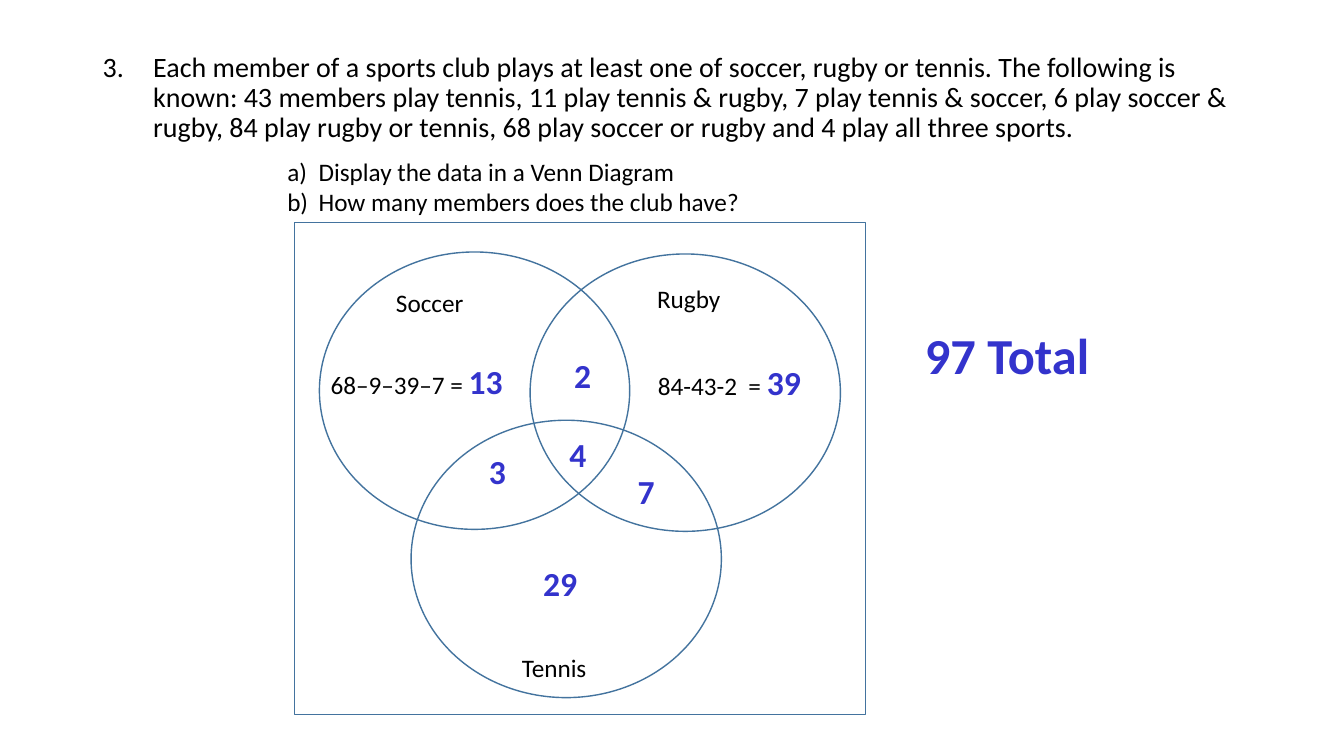
"""Builds a slide that solves a three-set Venn diagram problem about a sports club."""
from dataclasses import dataclass

from lxml.etree import SubElement
from pptx import Presentation
from pptx.dml.color import RGBColor
from pptx.enum.shapes import MSO_SHAPE
from pptx.enum.text import MSO_AUTO_SIZE
from pptx.oxml.ns import qn
from pptx.util import Cm, Pt


@dataclass(frozen=True)
class Theme:
    """Font, colours and type sizes of the slide."""
    font: str = "Calibri"
    ink: RGBColor = RGBColor(0x00, 0x00, 0x00)
    answer: RGBColor = RGBColor(0x33, 0x33, 0xCC)
    outline: RGBColor = RGBColor(0x43, 0x73, 0x9E)
    question_size: int = 20
    body_size: int = 18
    count_size: int = 24
    total_size: int = 36


THEME = Theme()
BODY = (THEME.body_size, THEME.ink, False)
QUESTION = (THEME.question_size, THEME.ink, False)
COUNT = (THEME.count_size, THEME.answer, True)
TOTAL = (THEME.total_size, THEME.answer, True)

PROBLEM = (
    "Each member of a sports club plays at least one of soccer, rugby or tennis. "
    "The following is known: 43 members play tennis, 11 play tennis & rugby, "
    "7 play tennis & soccer, 6 play soccer & rugby, 84 play rugby or tennis, "
    "68 play soccer or rugby and 4 play all three sports."
)
TASKS = ["Display the data in a Venn Diagram", "How many members does the club have?"]

UNIVERSE = (7.42, 5.61, 14.4, 12.4)
SET_SIZE = (7.82, 6.99)
SETS = [
    {"name": "Soccer", "corner": (8.05, 6.35), "label": (9.73, 7.11, 2.24, 1.02)},
    {"name": "Rugby", "corner": (13.36, 6.4), "label": (16.31, 7.01, 2.13, 1.02)},
    {"name": "Tennis", "corner": (10.36, 10.59), "label": (12.9, 16.31, 2.16, 1.02)},
]
REGIONS = [
    ("", "4", (14.1, 10.8, 0.94, 1.27)),
    ("", "7", (15.82, 11.73, 0.94, 1.27)),
    ("", "3", (12.07, 11.25, 0.94, 1.27)),
    ("", "2", (14.22, 8.81, 0.94, 1.27)),
    ("", "29", (13.44, 14.07, 1.37, 1.27)),
    ("84-43-2  = ", "39", (16.33, 8.99, 4.17, 1.27)),
    ("68–9–39–7 = ", "13", (8.08, 8.97, 4.9, 1.27)),
]


def add_text(page, place, paragraphs, wrap=False):
    """Adds a text box; each paragraph is a list of (text, style) spans."""
    box = page.shapes.add_textbox(*map(Cm, place))
    frame = box.text_frame
    frame.word_wrap = wrap
    frame.auto_size = MSO_AUTO_SIZE.SHAPE_TO_FIT_TEXT
    for index, spans in enumerate(paragraphs):
        para = frame.paragraphs[0] if index == 0 else frame.add_paragraph()
        for text, (size, colour, bold) in spans:
            span = para.add_run()
            span.text = text
            span.font.name = THEME.font
            span.font.size = Pt(size)
            span.font.bold = bold
            span.font.color.rgb = colour
    return frame


def number_paragraphs(frame, scheme, start, indent):
    """Numbers every paragraph of a frame with a hanging indent in centimetres."""
    for para in frame.paragraphs:
        properties = para._p.get_or_add_pPr()
        properties.set("marL", str(Cm(indent)))
        properties.set("indent", str(-Cm(indent)))
        numbering = SubElement(properties, qn("a:buAutoNum"), type=scheme)
        if start > 1:
            numbering.set("startAt", str(start))


def add_outline(page, kind, place):
    """Adds an unfilled shape with a thin outline."""
    shape = page.shapes.add_shape(kind, *map(Cm, place))
    shape.shadow.inherit = False
    shape.fill.background()
    shape.line.color.rgb = THEME.outline
    shape.line.width = Pt(1)


def main():
    """Builds and saves the deck."""
    deck = Presentation()
    deck.slide_width, deck.slide_height = Cm(33.87), Cm(19.05)
    page = deck.slides.add_slide(deck.slide_layouts[6])

    problem = add_text(page, (2.34, 1.02, 29.21, 3.68), [[(PROBLEM, QUESTION)]], wrap=True)
    problem.auto_size = MSO_AUTO_SIZE.NONE
    problem.margin_top = Cm(0.32)
    problem.paragraphs[0].line_spacing = 0.9
    number_paragraphs(problem, "arabicPeriod", 3, 1.27)

    tasks = add_text(page, (6.99, 3.81, 12.7, 1.8), [[(task, BODY)] for task in TASKS], wrap=True)
    number_paragraphs(tasks, "alphaLcParenR", 1, 0.79)

    for sport in SETS:
        add_outline(page, MSO_SHAPE.OVAL, sport["corner"] + SET_SIZE)
        add_text(page, sport["label"], [[(sport["name"], BODY)]])

    for working, count, place in REGIONS:
        spans = [(working, BODY)] if working else []
        add_text(page, place, [spans + [(count, COUNT)]])

    add_outline(page, MSO_SHAPE.RECTANGLE, UNIVERSE)
    add_text(page, (23.06, 8.05, 5.51, 1.8), [[("97 Total", TOTAL)]], wrap=True)
    deck.save("out.pptx")


if __name__ == "__main__":
    main()
